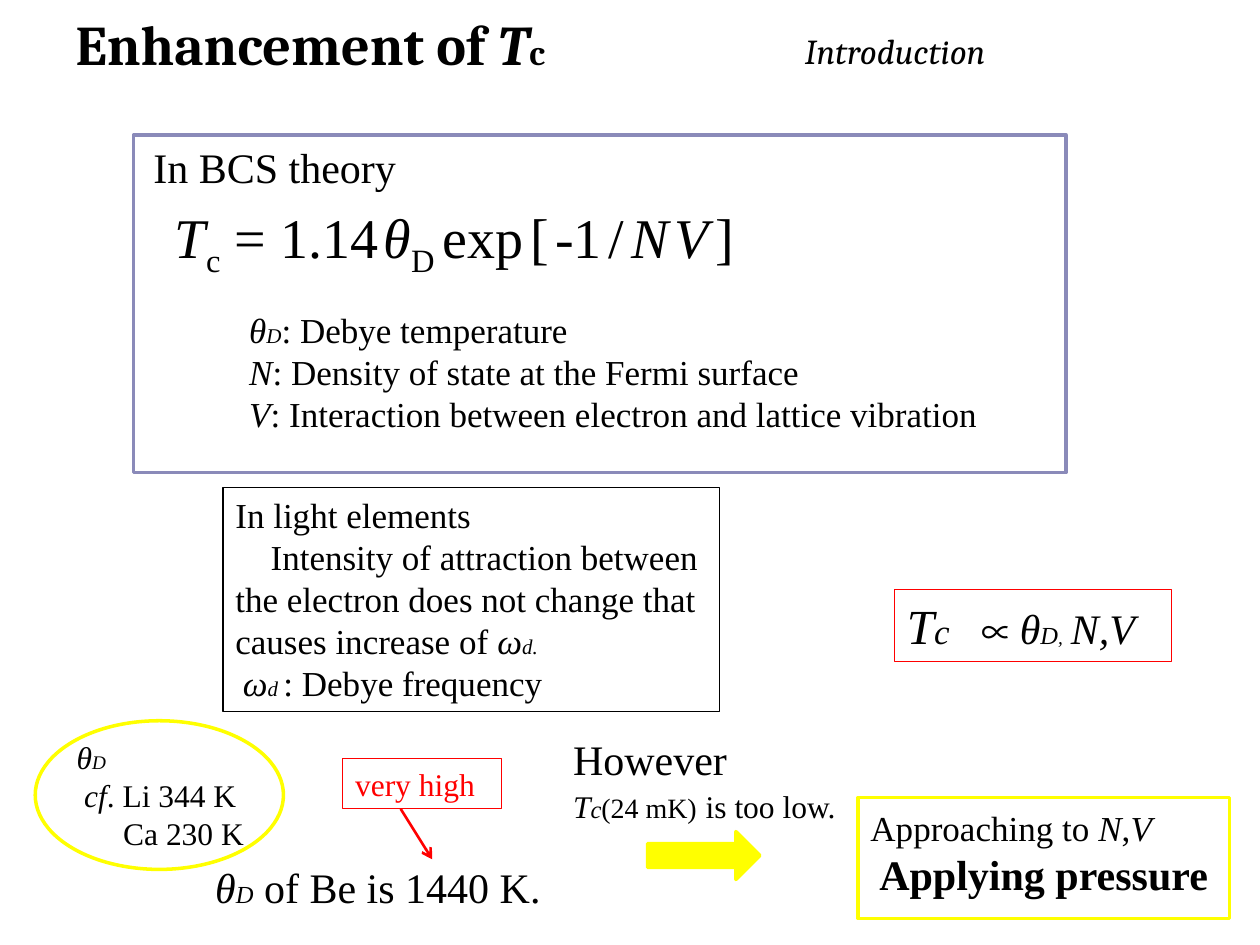
from lxml.etree import SubElement
from pptx import Presentation
from pptx.dml.color import RGBColor
from pptx.enum.shapes import MSO_CONNECTOR, MSO_SHAPE
from pptx.enum.text import MSO_ANCHOR, MSO_AUTO_SIZE, PP_ALIGN
from pptx.oxml.ns import qn
from pptx.util import Inches, Pt

BLACK = RGBColor(0x00, 0x00, 0x00)
RED = RGBColor(0xFF, 0x00, 0x00)
YELLOW = RGBColor(0xFF, 0xFF, 0x00)
LAVENDER = RGBColor(0x8A, 0x8A, 0xB9)
SERIF = "Times New Roman"
HEADING = "Cambria"


def write(p, runs, font=SERIF, color=BLACK, left=0, first=0, before=0):
    """Fill a paragraph with (text, size, style) runs; style letters: b, i, _ (subscript)."""
    pPr = p._p.get_or_add_pPr()
    pPr.set("marL", str(Inches(left)))
    pPr.set("indent", str(Inches(first)))
    p.alignment = PP_ALIGN.LEFT
    p.space_before = Pt(before)
    for text, size, style in runs:
        r = p.add_run()
        r.text = text
        r.font.name = font
        r.font.size = Pt(size)
        r.font.color.rgb = color
        r.font.bold = "b" in style
        r.font.italic = "i" in style
        if "_" in style:
            r.font._element.set("baseline", "-25000")


def write_all(tf, paragraphs, color=BLACK):
    """Fill a frame with (runs, format) paragraphs."""
    tf.word_wrap = True
    tf.vertical_anchor = MSO_ANCHOR.TOP
    for i, (runs, fmt) in enumerate(paragraphs):
        p = tf.add_paragraph() if i else tf.paragraphs[0]
        write(p, runs, **{"color": color, **fmt})


def add_text(s, x, y, w, h, *paragraphs):
    tf = s.shapes.add_textbox(Inches(x), Inches(y), Inches(w), Inches(h)).text_frame
    write_all(tf, paragraphs)
    return tf


def add_frame(s, x, y, w, h, *paragraphs, kind=MSO_SHAPE.RECTANGLE,
              line=BLACK, width=0.75, fill=None, color=BLACK):
    sp = s.shapes.add_shape(kind, Inches(x), Inches(y), Inches(w), Inches(h))
    sp.shadow.inherit = False
    if fill is None:
        sp.fill.background()
    else:
        sp.fill.solid()
        sp.fill.fore_color.rgb = fill
    sp.line.color.rgb = line
    sp.line.width = Pt(width)
    write_all(sp.text_frame, paragraphs, color)


def add_arrow(s, x1, y1, x2, y2):
    line = s.shapes.add_connector(MSO_CONNECTOR.STRAIGHT, Inches(x1), Inches(y1),
                                  Inches(x2), Inches(y2))
    line.line.color.rgb = RED
    line.line.width = Pt(1.5)
    SubElement(line.line._get_or_add_ln(), qn("a:tailEnd"), type="arrow")
    SubElement(line._element.spPr, qn("a:effectLst"))


def set_title(s, x, y, w, h):
    """Place the title, with the section name on the same baseline."""
    title = s.shapes.title
    title.left, title.top, title.width, title.height = map(Inches, (x, y, w, h))
    tf = title.text_frame
    tf.auto_size = MSO_AUTO_SIZE.NONE
    tf.vertical_anchor = MSO_ANCHOR.MIDDLE
    write(tf.paragraphs[0],
          [("Enhancement of ", 32, "b"), ("T", 32, "bi"), ("c", 20, "b")], font=HEADING)
    section = add_text(s, x + 5.79, y + 0.06, w - 5.79, h,
                       ([("Introduction", 20, "i")], dict(font=HEADING)))
    section.vertical_anchor = MSO_ANCHOR.MIDDLE


def add_theory(s, x, y, w, h):
    formula = [("T", 32, "i"), ("c", 32, "_"), (" = ", 32, ""), ("1.14", 32, ""),
               (" ", 12, ""), ("θ", 32, "i"), ("D", 32, "_"), (" ", 18, ""),
               ("exp", 32, ""), (" ", 16, ""), ("[", 32, ""), (" ", 14, ""),
               ("-1", 32, ""), (" ", 16, ""), ("/", 32, ""), (" ", 16, ""),
               ("N", 32, "i"), (" ", 14, ""), ("V", 32, "i"), (" ", 14, ""),
               ("]", 32, "")]
    add_text(s, x + 0.06, y, 9, 1.25,
             ([("In BCS theory", 24, "")], {}),
             (formula, dict(left=0.17, before=6.4)))
    symbols = [([("θ", 20, "i"), ("D", 12, "i")], "Debye temperature"),
               ([("N", 20, "i")], "Density of state at the Fermi surface"),
               ([("V", 20, "i")], "Interaction between electron and lattice vibration")]
    add_text(s, x + 0.75, y + 1.33, 8.1, 1.18,
             *[(symbol + [(": " + meaning, 20, "")], dict(left=0.07))
               for symbol, meaning in symbols])
    add_frame(s, x, y, w, h, line=LAVENDER, width=2)


def add_light_elements(s, x, y, w, h):
    add_frame(s, x, y, w, h,
              ([("In light elements", 20, "")], {}),
              ([("Intensity of attraction between the electron does not change that "
                 "causes increase of ", 20, ""), ("ω", 20, "i"), ("d.", 12, "i")],
               dict(first=0.28)),
              ([("ω", 20, "i"), ("d ", 12, "i"), (": Debye frequency", 20, "")],
               dict(left=0.06)))


def add_proportion(s, x, y, w, h):
    add_frame(s, x, y, w, h,
              ([("T", 28, "i"), ("c", 20, "i"), ("　∝ ", 18, ""), ("θ", 24, "i"),
                ("D", 14, "i"), (",", 11, "i"), (" ", 18, "i"), ("N,V", 24, "i")], {}),
              line=RED)


def add_comparison(s, x, y, w, h):
    add_text(s, x + 0.23, y + 0.09, w - 0.24, 1.01,
             ([("θ", 18, "i"), ("D", 11, "i")], {}),
             ([("cf", 18, "i"), (". Li 344 K", 18, "")], dict(left=0.06)),
             ([("Ca 230 K", 18, "")], dict(left=0.37)))
    add_frame(s, x, y, w, h, kind=MSO_SHAPE.OVAL, line=YELLOW, width=2)


def add_beryllium(s, x, y):
    add_text(s, x, y + 0.77, 3.39, 0.5,
             ([("θ", 24, "i"), ("D", 14, "i"), (" of Be is 1440 K.", 24, "")], {}))
    add_arrow(s, x + 1.57, y + 0.4, x + 1.82, y + 0.8)
    add_frame(s, x + 1.11, y, 1.26, 0.4, ([("very high", 18, "")], {}),
              line=RED, color=RED)


def add_drawback(s, x, y, w, h):
    add_frame(s, x + 0.69, y + 0.83, 0.89, 0.38, kind=MSO_SHAPE.RIGHT_ARROW,
              line=YELLOW, width=2, fill=YELLOW)
    add_text(s, x, y, w, h,
             ([("However", 24, "")], {}),
             ([("T", 18, "i"), ("c", 14, "i"), ("(24 mK)", 16, ""), (" ", 20, ""),
               ("is too low.", 18, "")], {}))


def add_approach(s, x, y, w, h):
    add_frame(s, x, y, w, h, line=YELLOW, width=2)
    add_text(s, x, y + 0.02, w + 0.2, 0.84,
             ([("Approaching to ", 20, ""), ("N", 20, "i"), (",", 20, ""),
               ("V", 20, "i")], {}),
             ([("Applying pressure", 24, "b")], dict(left=0.07)))


def main():
    prs = Presentation()
    prs.slide_width, prs.slide_height = Inches(10), Inches(7.5)
    s = prs.slides.add_slide(prs.slide_layouts[5])
    set_title(s, 0.5, 0, 9, 0.68)
    add_theory(s, 1.06, 1.07, 7.4, 2.68)
    add_light_elements(s, 1.77, 3.87, 3.94, 1.78)
    add_proportion(s, 7.1, 4.68, 2.2, 0.57)
    add_comparison(s, 0.28, 5.72, 1.97, 1.18)
    add_beryllium(s, 1.61, 6.02)
    add_drawback(s, 4.45, 5.77, 2.46, 0.84)
    add_approach(s, 6.81, 6.33, 2.95, 0.96)
    prs.save("out.pptx")


if __name__ == "__main__":
    main()
